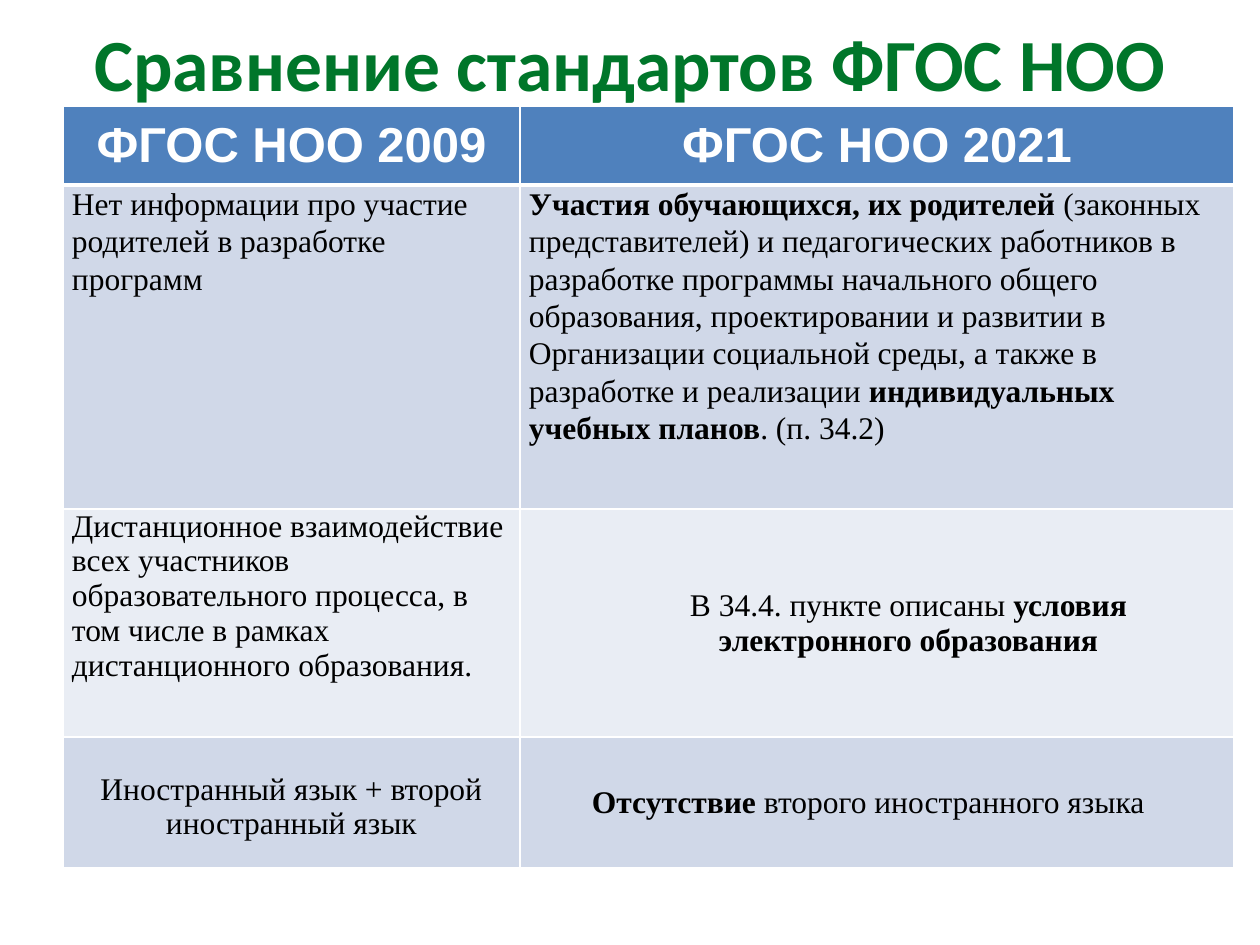
from dataclasses import dataclass

from lxml.etree import SubElement
from pptx import Presentation
from pptx.dml.color import RGBColor
from pptx.enum.text import MSO_ANCHOR, PP_ALIGN
from pptx.oxml.ns import qn
from pptx.util import Pt

PX = 914400 / 126


def px(length):
    return round(length * PX)


@dataclass(frozen=True)
class Theme:
    title: str = "00762A"
    header: str = "4F81BD"
    band_dark: str = "D0D8E8"
    band_light: str = "E9EDF4"
    white: str = "FFFFFF"
    black: str = "000000"
    title_font: str = "Calibri"
    header_font: str = "Arial"
    body_font: str = "Times New Roman"
    title_size: int = 42
    header_size: int = 28
    body_size: int = 18


def write_text(para, spans, *, font, size, color, align=PP_ALIGN.LEFT,
               spacing=None, indent=0):
    """Fill a paragraph with (text, bold) spans."""
    if indent:
        para._p.get_or_add_pPr().set("marL", str(px(indent)))
    para.alignment = align
    if spacing:
        para.line_spacing = spacing
    for text, bold in spans:
        span = para.add_run()
        span.text = text
        span.font.name = font
        span.font.size = Pt(size)
        span.font.bold = bold
        span.font.color.rgb = RGBColor.from_string(color)


class SlideBuilder:
    def __init__(self, page, theme):
        self.page = page
        self.theme = theme

    def title(self, text, left, top, width, height):
        box = self.page.shapes.add_textbox(px(left), px(top), px(width), px(height))
        frame = box.text_frame
        frame.word_wrap = True
        frame.vertical_anchor = MSO_ANCHOR.MIDDLE
        write_text(frame.paragraphs[0], [(text, True)], font=self.theme.title_font,
                   size=self.theme.title_size, color=self.theme.title,
                   align=PP_ALIGN.CENTER)

    def table(self, left, top, columns, rows):
        frame = self.page.shapes.add_table(
            len(rows), len(columns), px(left), px(top), px(sum(columns)), px(sum(rows)))
        table = frame.table
        table.first_row = False
        table.horz_banding = False
        for column, width in zip(table.columns, columns):
            column.width = px(width)
        for row, height in zip(table.rows, rows):
            row.height = px(height)
        return table

    def borders(self, cell, **widths):
        properties = cell._tc.get_or_add_tcPr()
        for position, side in enumerate("LRTB"):
            line = SubElement(properties, qn(f"a:ln{side}"),
                              w=str(Pt(widths.get(side, 1))))
            fill = SubElement(line, qn("a:solidFill"))
            SubElement(fill, qn("a:srgbClr"), val=self.theme.white)
            properties.insert(position, line)

    def fill(self, cell, color):
        cell.fill.solid()
        cell.fill.fore_color.rgb = RGBColor.from_string(color)

    def header_cell(self, cell, text):
        self.fill(cell, self.theme.header)
        self.borders(cell, B=3)
        cell.vertical_anchor = MSO_ANCHOR.MIDDLE
        write_text(cell.text_frame.paragraphs[0], [(text, True)],
                   font=self.theme.header_font, size=self.theme.header_size,
                   color=self.theme.white, align=PP_ALIGN.CENTER)

    def body_cell(self, cell, spans, color, *, top_border=1, anchor=MSO_ANCHOR.TOP,
                  top_margin=0, **text_format):
        self.fill(cell, color)
        self.borders(cell, T=top_border)
        cell.vertical_anchor = anchor
        cell.margin_left = cell.margin_right = px(9)
        cell.margin_top, cell.margin_bottom = px(top_margin), 0
        write_text(cell.text_frame.paragraphs[0], spans, font=self.theme.body_font,
                   size=self.theme.body_size, color=self.theme.black, **text_format)


def main():
    deck = Presentation()
    deck.slide_width, deck.slide_height = px(1260), px(945)
    theme = Theme()
    builder = SlideBuilder(deck.slides.add_slide(deck.slide_layouts[6]), theme)

    # Title
    builder.title("Сравнение стандартов ФГОС НОО", 63, 38, 1134, 48)

    # Comparison table: header row
    table = builder.table(63, 106, columns=[457, 714], rows=[79, 324, 228, 131])
    for column, year in enumerate((2009, 2021)):
        builder.header_cell(table.cell(0, column), f"ФГОС НОО {year}")

    # Comparison table: each cell holds its spans and its format
    middle, center = MSO_ANCHOR.MIDDLE, PP_ALIGN.CENTER
    participation = dict(top_border=3, spacing=1.07)
    comparison = [
        [([("Нет информации про участие родителей в разработке программ", False)],
          participation),
         ([("Участия обучающихся, их родителей ", True),
           ("(законных представителей) и педагогических работников в разработке "
            "программы начального общего образования, проектировании и развитии в "
            "Организации социальной среды, а также в разработке и реализации ", False),
           ("индивидуальных учебных планов", True),
           (". (п. 34.2)", False)],
          participation)],
        [([("Дистанционное взаимодействие всех участников образовательного процесса, "
            "в том числе в рамках дистанционного образования.", False)],
          {}),
         ([("В 34.4. пункте описаны ", False),
           ("условия электронного образования", True)],
          dict(anchor=middle, align=center, indent=63))],
        [([("Иностранный язык + второй иностранный язык", False)],
          dict(top_margin=35, align=center)),
         ([("Отсутствие", True), (" второго иностранного языка", False)],
          dict(anchor=middle, indent=63))],
    ]
    for row, cells in enumerate(comparison, start=1):
        band = theme.band_dark if row % 2 else theme.band_light
        for column, (spans, cell_format) in enumerate(cells):
            builder.body_cell(table.cell(row, column), spans, band, **cell_format)

    deck.save("out.pptx")


if __name__ == "__main__":
    main()
